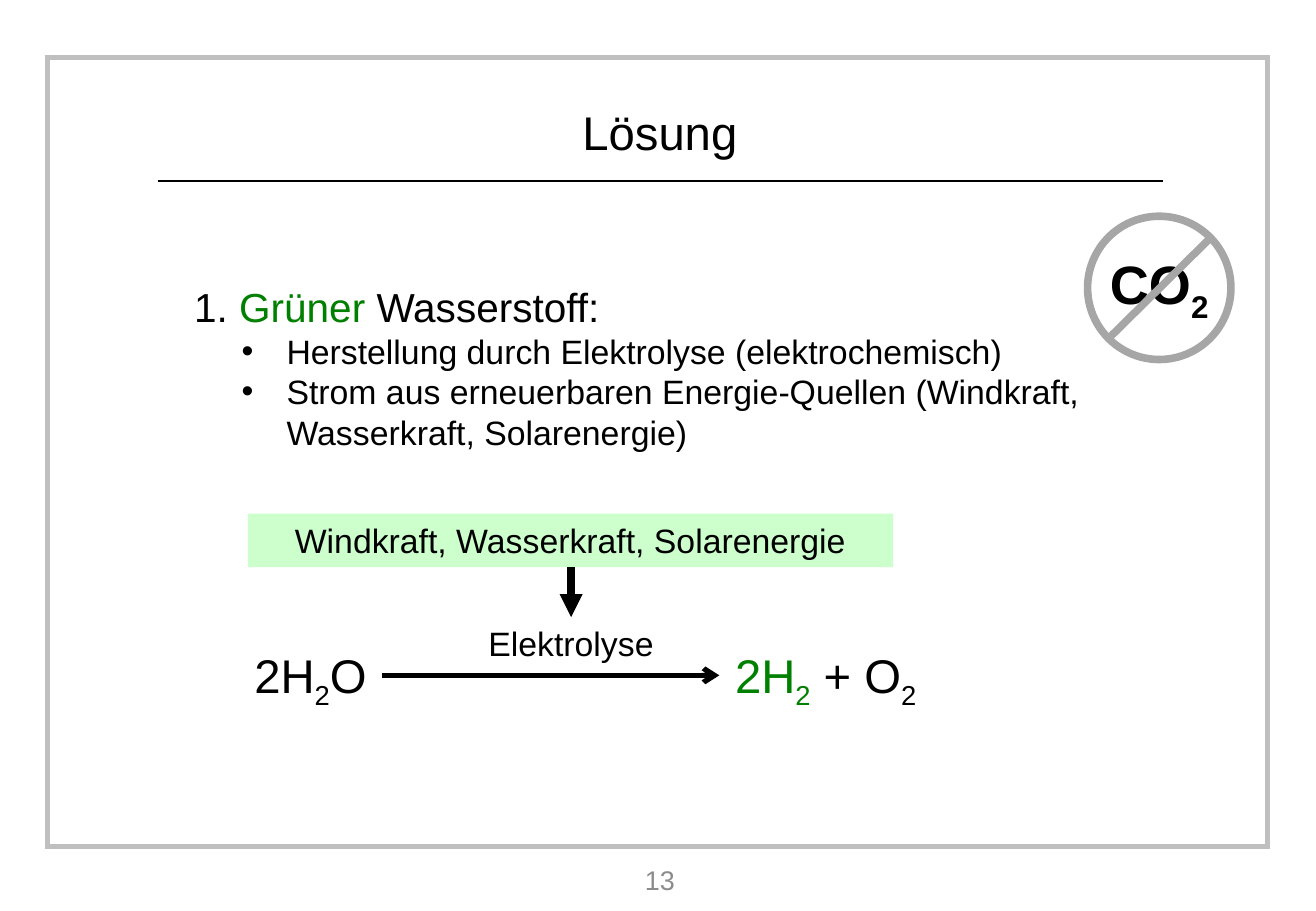
import pptx
import pptx.util
import pptx.dml.color
import pptx.enum.shapes
import pptx.enum.text
import pptx.oxml
import pptx.oxml.ns

Inches, Pt = pptx.util.Inches, pptx.util.Pt
Rgb = pptx.dml.color.RGBColor.from_string
Shape = pptx.enum.shapes.MSO_SHAPE
Align = pptx.enum.text.PP_ALIGN
Anchor = pptx.enum.text.MSO_ANCHOR
qualified = pptx.oxml.ns.qn

COLORS = {
    "black": "000000", "white": "FFFFFF", "green": "008000", "mint": "CCFFCC",
    "frame": "BFBFBF", "sign": "A6A6A6", "number": "8C8C8C",
}
WIDTH, HEIGHT = 10.83, 7.5
CENTER = 5.43
ENERGY_X = 4.7
REACTION_Y = 5.56


def add_runs(paragraph, runs, size, align=Align.CENTER, bold=False):
    paragraph.alignment = align
    for text, color in runs:
        run = paragraph.add_run()
        run.text = text.lstrip("_")
        run.font.name = "Arial"
        run.font.size = Pt(size)
        run.font.bold = bold
        run.font.color.rgb = Rgb(COLORS[color])
        if text.startswith("_"):
            run.font._element.set("baseline", "-25000")


def add_line(start, end, color, width, head=None):
    line = slide.shapes.add_connector(
        pptx.enum.shapes.MSO_CONNECTOR.STRAIGHT, *map(Inches, start + end))
    line.line.color.rgb = Rgb(COLORS[color])
    line.line.width = Pt(width)
    properties = line._element.spPr
    if head:
        outline = properties.find(qualified("a:ln"))
        outline.append(outline.makeelement(qualified("a:tailEnd"), {"type": head}))
    properties.append(properties.makeelement(qualified("a:effectLst"), {}))


presentation = pptx.Presentation()
presentation.slide_width = Inches(WIDTH)
presentation.slide_height = Inches(HEIGHT)
slide = presentation.slides.add_slide(presentation.slide_layouts[5])

boxes = {}
for name, kind, left, top, width, height, fill, line, line_width in [
    ("frame", Shape.RECTANGLE, 0.39, 0.47, 10.04, 6.5, None, "frame", 3),
    ("energy", Shape.RECTANGLE, ENERGY_X - 2.66, 4.23, 5.31, 0.44, "mint", None, 0),
    ("sign", Shape.OVAL, 8.95, 1.78, 1.18, 1.18, "white", "sign", 4.5),
]:
    shape = slide.shapes.add_shape(kind, *map(Inches, (left, top, width, height)))
    shape.shadow.inherit = False
    if fill:
        shape.fill.solid()
        shape.fill.fore_color.rgb = Rgb(COLORS[fill])
    else:
        shape.fill.background()
    if line:
        shape.line.color.rgb = Rgb(COLORS[line])
        shape.line.width = Pt(line_width)
        outline = shape._element.spPr.find(qualified("a:ln"))
        outline.append(outline.makeelement(qualified("a:miter"), {"lim": "800000"}))
    else:
        shape.line.fill.background()
    boxes[name] = shape

title = slide.shapes.title
boxes["frame"]._element.addnext(title._element)
title.left, title.top, title.width, title.height = map(Inches, (CENTER - 2, 0.79, 4, 0.59))
title.text_frame.vertical_anchor = Anchor.MIDDLE
add_runs(title.text_frame.paragraphs[0], [("Lösung", "black")], 28)
add_line((1.3, 1.49), (9.57, 1.49), "black", 1.5)

body = slide.shapes.add_textbox(*map(Inches, (1.5, 1.57, 7.87, 2.9))).text_frame
body.word_wrap = True
body.vertical_anchor = Anchor.MIDDLE
add_runs(body.paragraphs[0],
         [("1. ", "black"), ("Grüner ", "green"), ("Wasserstoff:", "black")], 24, Align.LEFT)
for point in [
    "Herstellung durch Elektrolyse (elektrochemisch)",
    "Strom aus erneuerbaren Energie-Quellen (Windkraft, Wasserkraft, Solarenergie)",
]:
    paragraph = body.add_paragraph()
    add_runs(paragraph, [(point, "black")], 20, Align.LEFT)
    properties = paragraph._p.get_or_add_pPr()
    properties.set("marL", str(Inches(0.76)))
    properties.set("indent", str(Inches(-0.37)))
    for tag, attributes in [("a:buFont", {"typeface": "Arial"}), ("a:buChar", {"char": "•"})]:
        properties.append(properties.makeelement(qualified(tag), attributes))

for left, top, width, height, size, anchor, runs in [
    (CENTER - 1.22, 7.05, 2.44, 0.39, 16, Anchor.MIDDLE, [("13", "number")]),
    (ENERGY_X - 0.97, 5.08, 1.94, 0.44, 20, Anchor.TOP, [("Elektrolyse", "black")]),
    (1.97, REACTION_Y - 0.29, 1.17, 0.57, 28, Anchor.TOP,
     [("2H", "black"), ("_2", "black"), ("O", "black")]),
    (5.91, REACTION_Y - 0.29, 1.77, 0.57, 28, Anchor.TOP,
     [("2H", "green"), ("_2", "green"), (" + O", "black"), ("_2", "black")]),
]:
    text_frame = slide.shapes.add_textbox(*map(Inches, (left, top, width, height))).text_frame
    text_frame.word_wrap = True
    text_frame.vertical_anchor = anchor
    add_runs(text_frame.paragraphs[0], runs, size)

energy_text = boxes["energy"].text_frame
energy_text.vertical_anchor = Anchor.TOP
add_runs(energy_text.paragraphs[0], [("Windkraft, Wasserkraft, Solarenergie", "black")], 20)
add_line((ENERGY_X, 4.67), (ENERGY_X, 5.08), "black", 4.5, "triangle")
add_line((3.14, REACTION_Y), (5.92, REACTION_Y), "black", 3, "arrow")

sign_text = boxes["sign"].text_frame
sign_text.margin_left = sign_text.margin_right = 0
sign_text.margin_top = sign_text.margin_bottom = 0
sign_text.word_wrap = False
add_runs(sign_text.paragraphs[0], [("CO", "black"), ("_2", "black")], 32, bold=True)
add_line((9.96, 1.96), (9.12, 2.79), "sign", 4.5)

presentation.save("out.pptx")
